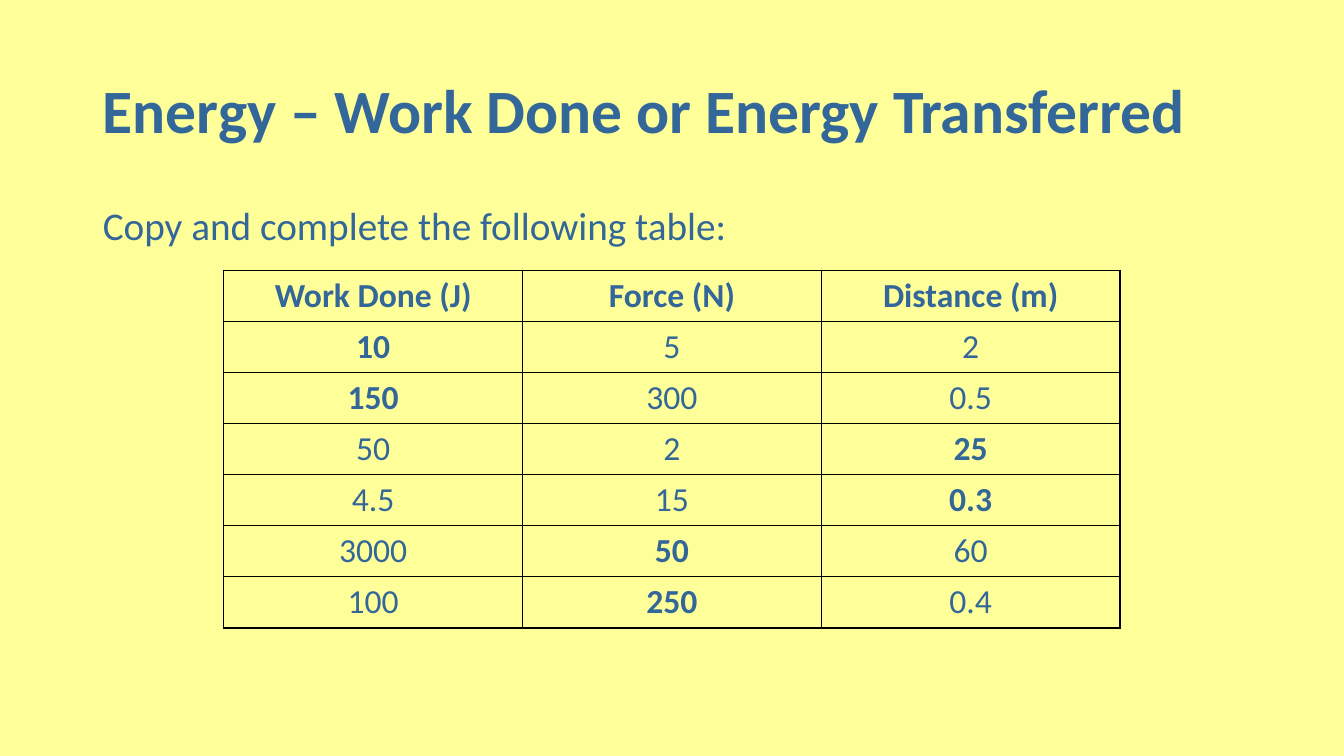
from dataclasses import dataclass

from lxml.etree import SubElement
from pptx import Presentation
from pptx.dml.color import RGBColor
from pptx.enum.text import MSO_ANCHOR as Anchor, MSO_AUTO_SIZE as Fit, PP_ALIGN as Align
from pptx.oxml.ns import qn
from pptx.util import Inches, Pt


@dataclass(frozen=True)
class Theme:
    font: str = "Calibri"
    back: str = "FFFF99"
    ink: str = "336699"
    rule: str = "000000"
    title: int = 44
    body: int = 28
    cell: int = 24


@dataclass(frozen=True)
class Box:
    left: float
    top: float
    width: float
    height: float


@dataclass(frozen=True)
class Entry:
    text: str
    bold: bool = False


THEME = Theme()
ROWS = [
    [Entry("Work Done (J)", True), Entry("Force (N)", True), Entry("Distance (m)", True)],
    [Entry("10", True), Entry("5"), Entry("2")],
    [Entry("150", True), Entry("300"), Entry("0.5")],
    [Entry("50"), Entry("2"), Entry("25", True)],
    [Entry("4.5"), Entry("15"), Entry("0.3", True)],
    [Entry("3000"), Entry("50", True), Entry("60")],
    [Entry("100"), Entry("250", True), Entry("0.4")],
]


def add_run(para, entry: Entry, size: int) -> None:
    run = para.add_run()
    run.text = entry.text
    font = run.font
    font.name, font.size, font.bold = THEME.font, Pt(size), entry.bold
    font.color.rgb = RGBColor.from_string(THEME.ink)


def fill_holder(shape, box: Box, entry: Entry, size: int, anchor: Anchor):
    shape.left, shape.top = Inches(box.left), Inches(box.top)
    shape.width, shape.height = Inches(box.width), Inches(box.height)
    frame = shape.text_frame
    frame.auto_size, frame.word_wrap = Fit.NONE, True
    frame.vertical_anchor = anchor
    para = frame.paragraphs[0]
    para.alignment, para.line_spacing = Align.LEFT, 0.9
    add_run(para, entry, size)
    return para


def add_border(cell) -> None:
    props = cell._tc.get_or_add_tcPr()
    for spot, side in enumerate(("lnL", "lnR", "lnT", "lnB")):
        line = SubElement(props, qn(f"a:{side}"), w=str(Pt(1)))
        fill = SubElement(line, qn("a:solidFill"))
        SubElement(fill, qn("a:srgbClr"), val=THEME.rule)
        props.insert(spot, line)  # borders come before the fill


def add_grid(slide, box: Box, rows: list[list[Entry]]) -> None:
    table = slide.shapes.add_table(
        len(rows), len(rows[0]), Inches(box.left), Inches(box.top),
        Inches(box.width), Inches(box.height)).table
    table.first_row = table.horz_banding = False
    for r, row in enumerate(rows):
        for c, entry in enumerate(row):
            cell = table.cell(r, c)
            cell.fill.background()
            add_border(cell)
            para = cell.text_frame.paragraphs[0]
            para.alignment = Align.CENTER
            add_run(para, entry, THEME.cell)


def main() -> None:
    deck = Presentation()
    deck.slide_width, deck.slide_height = Inches(13.33), Inches(7.5)
    slide = deck.slides.add_slide(deck.slide_layouts[1])

    # Background
    fill = slide.background.fill
    fill.solid()
    fill.fore_color.rgb = RGBColor.from_string(THEME.back)

    # Title and task
    fill_holder(slide.shapes.title, Box(0.92, 0.4, 11.5, 1.45),
                Entry("Energy – Work Done or Energy Transferred", True),
                THEME.title, Anchor.MIDDLE)
    task = fill_holder(slide.placeholders[1], Box(0.92, 2, 11.5, 4.76),
                       Entry("Copy and complete the following table:"),
                       THEME.body, Anchor.TOP)
    task.space_before = Pt(10)
    props = task._p.get_or_add_pPr()
    props.set("marL", "0")
    props.set("indent", "0")
    SubElement(props, qn("a:buNone"))

    # Table of results
    add_grid(slide, Box(2.22, 2.68, 8.89, 3.5), ROWS)
    deck.save("out.pptx")


if __name__ == "__main__":
    main()
